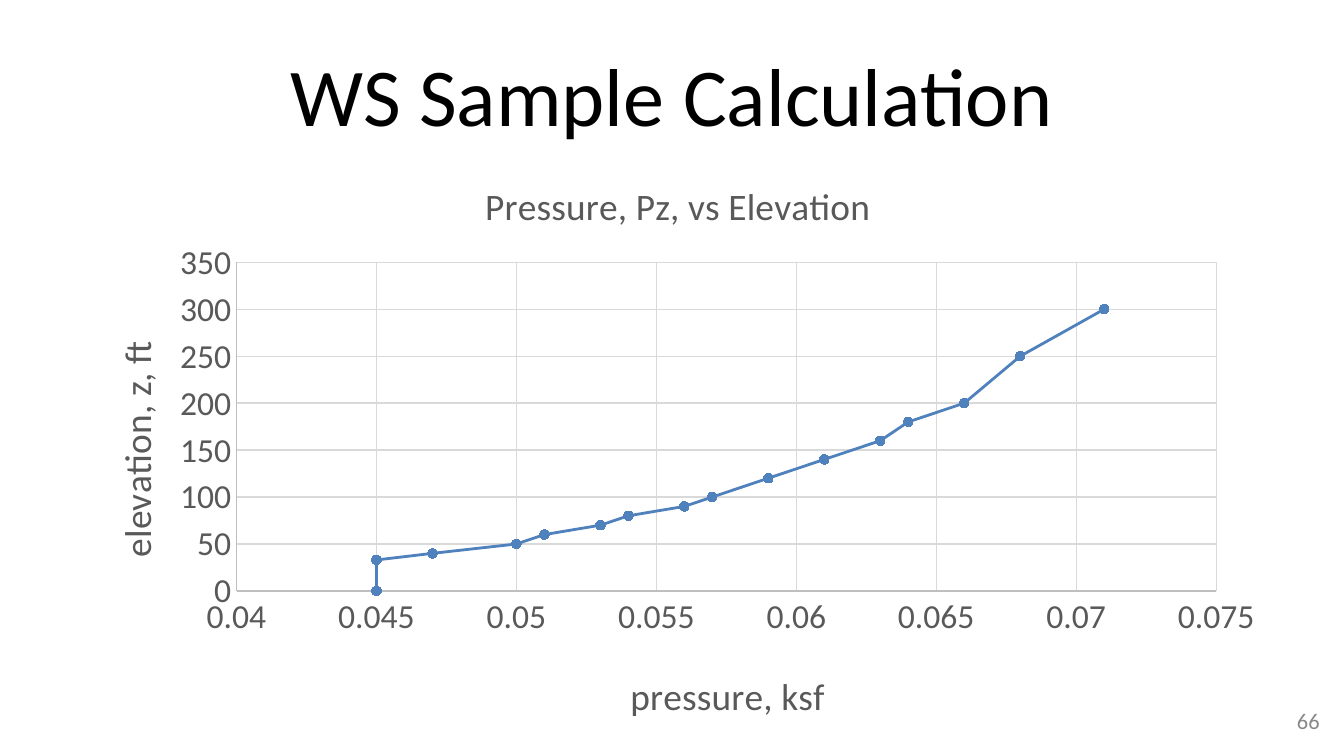
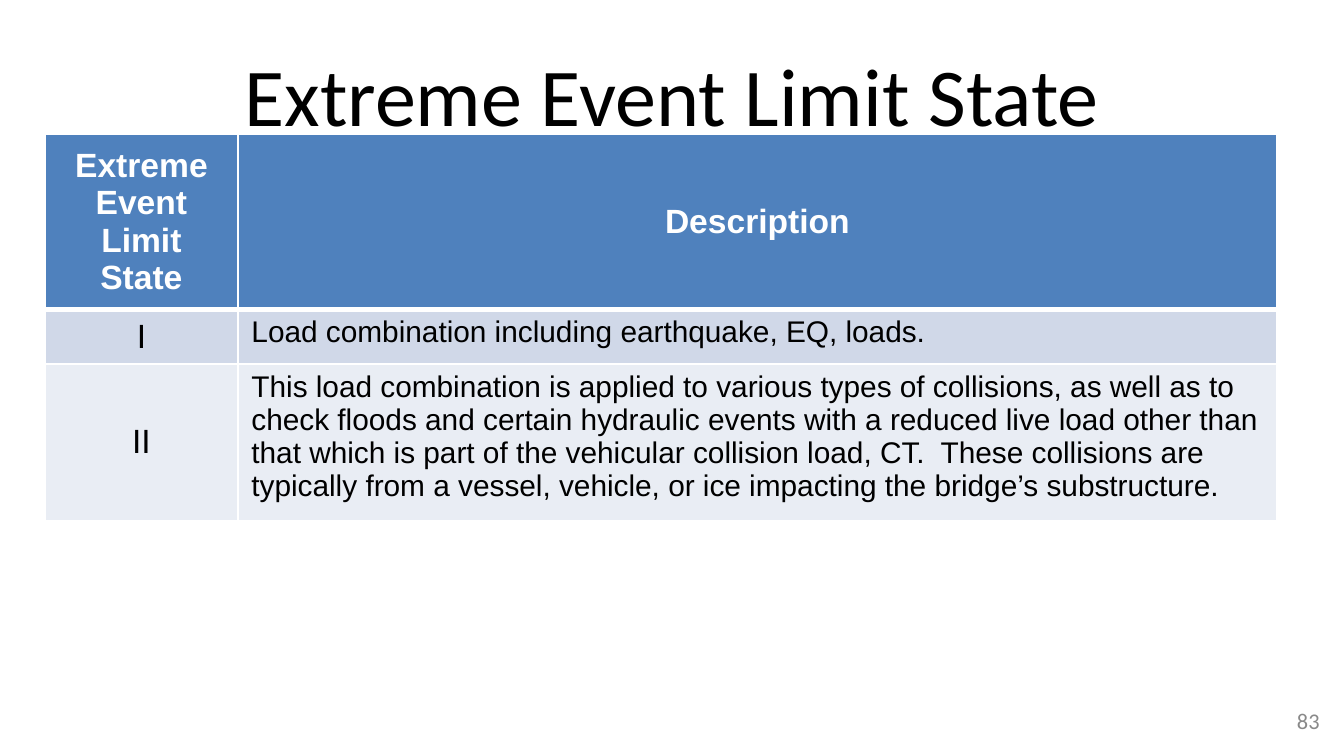
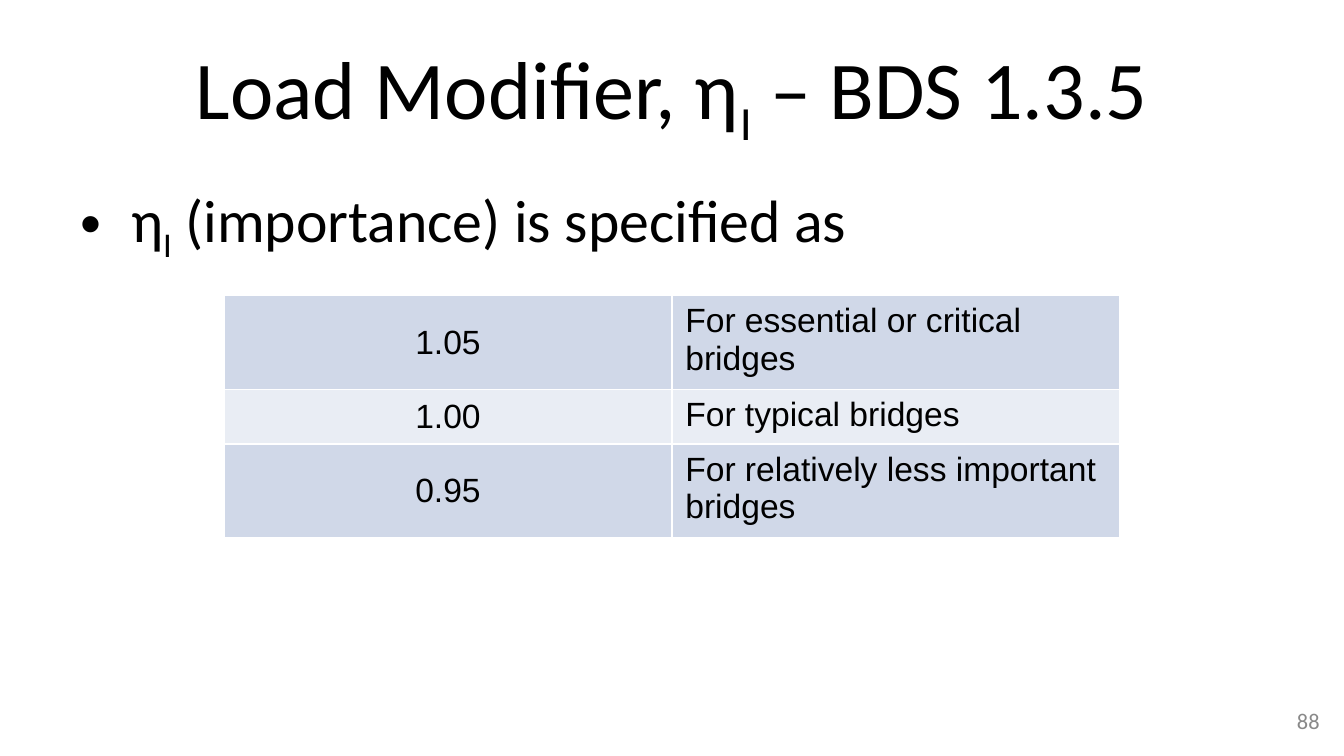
"""Build three bridge design slides: a wind pressure chart and two load tables."""
import pptx
import pptx.chart.data
import pptx.dml.color
import pptx.enum.chart
import pptx.enum.text
import pptx.oxml
import pptx.oxml.ns
import pptx.util

RGBColor = pptx.dml.color.RGBColor
BLACK = RGBColor(0x00, 0x00, 0x00)
WHITE = RGBColor(0xFF, 0xFF, 0xFF)
BLUE = RGBColor(0x4F, 0x81, 0xBD)
BAND_DARK = RGBColor(0xD0, 0xD8, 0xE8)
BAND_LIGHT = RGBColor(0xE9, 0xED, 0xF4)
NUMBER_GREY = RGBColor(0x89, 0x89, 0x89)
LABEL_GREY = RGBColor(0x59, 0x59, 0x59)
AXIS_GREY = RGBColor(0xBF, 0xBF, 0xBF)
GRID_GREY = RGBColor(0xD9, 0xD9, 0xD9)

LEFT = pptx.enum.text.PP_ALIGN.LEFT
CENTER = pptx.enum.text.PP_ALIGN.CENTER
RIGHT = pptx.enum.text.PP_ALIGN.RIGHT
TOP = pptx.enum.text.MSO_ANCHOR.TOP
MIDDLE = pptx.enum.text.MSO_ANCHOR.MIDDLE

EMU_PER_PX = 9525
SLIDE_SIZE = (960, 540)
TITLE_BOX = (48, 22, 864, 90)
BODY_BOX = (48, 126, 864, 356)
NUMBER_BOX = (728, 500, 224, 29)
CHART_BOX = (48, 102, 864, 427)
ROW_HEIGHT = 39
TITLE_ONLY, TITLE_AND_CONTENT = 5, 1

PRESSURES = [0.045, 0.045, 0.047, 0.05, 0.051, 0.053, 0.054, 0.056,
             0.057, 0.059, 0.061, 0.063, 0.064, 0.066, 0.068, 0.071]
ELEVATIONS = [0, 33, 40, 50, 60, 70, 80, 90,
              100, 120, 140, 160, 180, 200, 250, 300]

LIMIT_STATES = [
    ("Extreme Event Limit State", "Description"),
    ("I", "Load combination including earthquake, EQ, loads."),
    ("II", "This load combination is applied to various types of collisions, "
           "as well as to check floods and certain hydraulic events with a "
           "reduced live load other than that which is part of the vehicular "
           "collision load, CT.  These collisions are typically from a vessel, "
           "vehicle, or ice impacting the bridge’s substructure."),
]
IMPORTANCE_FACTORS = [
    ("1.05", "For essential or critical bridges"),
    ("1.00", "For typical bridges"),
    ("0.95", "For relatively less important bridges"),
]


def px(length):
    """Turn whole pixels into EMU."""
    return pptx.util.Emu(length * EMU_PER_PX)


def write(frame, text, size=18, color=BLACK, font="Calibri", bold=False, align=None):
    """Write text in a frame; parts between underscores become subscripts."""
    paragraph = frame.paragraphs[0]
    if align is not None:
        paragraph.alignment = align
    for index, part in enumerate(text.split("_")):
        run = paragraph.add_run()
        run.text = part
        run.font.size = pptx.util.Pt(size)
        run.font.name = font
        run.font.bold = bold
        run.font.color.rgb = color
        if index % 2:
            run._r.get_or_add_rPr().set("baseline", "-25000")


def fill_placeholder(placeholder, box, text, **style):
    """Move a placeholder to its box and write its text."""
    placeholder.left, placeholder.top, placeholder.width, placeholder.height = map(px, box)
    placeholder.text_frame.auto_size = pptx.enum.text.MSO_AUTO_SIZE.NONE
    write(placeholder.text_frame, text, **style)


def add_page(deck, layout, heading, number):
    """Add a slide with its title and page number."""
    slide = deck.slides.add_slide(deck.slide_layouts[layout])
    fill_placeholder(slide.shapes.title, TITLE_BOX, heading, size=44, align=CENTER)
    frame = slide.shapes.add_textbox(*map(px, NUMBER_BOX)).text_frame
    frame.word_wrap = True
    frame.vertical_anchor = MIDDLE
    write(frame, number, size=12, color=NUMBER_GREY, align=RIGHT)
    return slide


def set_layout(element, index, target="", **fractions):
    """Fix a chart part's place as fractions of the chart area."""
    for automatic in element.findall(pptx.oxml.ns.qn("c:layout")):
        element.remove(automatic)
    modes = "".join(f'<c:{key}Mode val="edge"/>' for key in ("x", "y"))
    values = "".join(f'<c:{key} val="{value}"/>' for key, value in fractions.items())
    element.insert(index, pptx.oxml.parse_xml(
        f'<c:layout {pptx.oxml.ns.nsdecls("c")}><c:manualLayout>'
        f'{target}{modes}{values}</c:manualLayout></c:layout>'))


def write_chart_title(title, text, x, y):
    """Write a chart or axis title at a fixed place."""
    write(title.text_frame, text, size=20, color=LABEL_GREY)
    set_layout(title._element, 1, x=x, y=y)


def style_line(line, color, width):
    """Set the colour and width of a line."""
    line.color.rgb = color
    line.width = pptx.util.Pt(width)


def style_axis(axis, low, high, step):
    """Set the scale, grid and labels of an axis."""
    axis.minimum_scale, axis.maximum_scale, axis.major_unit = low, high, step
    axis.has_major_gridlines = True
    axis.major_tick_mark = axis.minor_tick_mark = pptx.enum.chart.XL_TICK_MARK.NONE
    style_line(axis.major_gridlines.format.line, GRID_GREY, 0.75)
    style_line(axis.format.line, AXIS_GREY, 0.75)
    labels = axis.tick_labels.font
    labels.size = pptx.util.Pt(18)
    labels.name = "Calibri"
    labels.color.rgb = LABEL_GREY


def add_pressure_chart(slide, box):
    """Draw wind pressure against elevation in the box."""
    data = pptx.chart.data.XyChartData()
    profile = data.add_series("Series 1")
    for pressure, elevation in zip(PRESSURES, ELEVATIONS):
        profile.add_data_point(pressure, elevation)
    chart = slide.shapes.add_chart(
        pptx.enum.chart.XL_CHART_TYPE.XY_SCATTER_LINES, *map(px, box), data).chart
    chart.has_legend = False
    chart.font.name = "Calibri"
    chart.font.size = pptx.util.Pt(10)

    style_axis(chart.category_axis, 0.04, 0.075, 0.005)
    style_axis(chart.value_axis, 0, 350, 50)
    write_chart_title(chart.chart_title, "Pressure, Pz, vs Elevation", 0.34, 0.05)
    write_chart_title(chart.category_axis.axis_title, "pressure, ksf", 0.46, 0.87)
    elevation_title = chart.value_axis.axis_title
    write_chart_title(elevation_title, "elevation, z, ft", 0.03, 0.32)
    body = elevation_title.text_frame._element.find(pptx.oxml.ns.qn("a:bodyPr"))
    body.set("rot", "-5400000")
    body.set("vert", "horz")
    set_layout(chart._chartSpace.chart.plotArea, 0, '<c:layoutTarget val="inner"/>',
               x=0.14, y=0.2, w=0.81, h=0.55)

    plot = chart.plots[0]
    plot.vary_by_categories = False
    curve = plot.series[0]
    curve.smooth = False
    style_line(curve.format.line, BLUE, 1.5)
    curve.marker.style = pptx.enum.chart.XL_MARKER_STYLE.CIRCLE
    curve.marker.size = 5
    curve.marker.format.fill.solid()
    curve.marker.format.fill.fore_color.rgb = BLUE
    curve.marker.format.line.color.rgb = BLUE


def style_cell(cell, fill, bottom=1):
    """Give a cell white borders and a solid fill."""
    properties = cell._tc.get_or_add_tcPr()
    for side, points in (("L", 1), ("R", 1), ("T", 1), ("B", bottom)):
        properties.append(pptx.oxml.parse_xml(
            f'<a:ln{side} {pptx.oxml.ns.nsdecls("a")} w="{pptx.util.Pt(points)}">'
            f'<a:solidFill><a:srgbClr val="{WHITE}"/></a:solidFill></a:ln{side}>'))
    cell.fill.solid()
    cell.fill.fore_color.rgb = fill


def add_load_table(slide, left, top, widths, rows, header=False, detail_size=18):
    """Draw a banded table of keys and descriptions."""
    table = slide.shapes.add_table(
        len(rows), len(widths), px(left), px(top),
        px(sum(widths)), px(ROW_HEIGHT * len(rows))).table
    table.first_row = header
    table.horz_banding = False
    for column, width in zip(table.columns, widths):
        column.width = px(width)
    for row_index, row in enumerate(rows):
        heading = header and row_index == 0
        band = (BAND_DARK, BAND_LIGHT)[(row_index - header) % 2]
        for column_index, text in enumerate(row):
            cell = table.cell(row_index, column_index)
            style_cell(cell, BLUE if heading else band, 3 if heading else 1)
            centered = heading or column_index == 0
            cell.vertical_anchor = MIDDLE if centered else TOP
            write(cell.text_frame, text, font="Arial", bold=heading,
                  size=18 if centered else detail_size,
                  color=WHITE if heading else BLACK,
                  align=CENTER if centered else LEFT)


def main():
    """Build and save the deck."""
    deck = pptx.Presentation()
    deck.slide_width, deck.slide_height = map(px, SLIDE_SIZE)

    wind = add_page(deck, TITLE_ONLY, "WS Sample Calculation", "66")
    add_pressure_chart(wind, CHART_BOX)

    extreme = add_page(deck, TITLE_ONLY, "Extreme Event Limit State", "83")
    add_load_table(extreme, 32, 96, (138, 742), LIMIT_STATES, header=True, detail_size=16)

    modifier = add_page(deck, TITLE_AND_CONTENT, "Load Modifier, η_I_ – BDS 1.3.5", "88")
    fill_placeholder(modifier.placeholders[1], BODY_BOX,
                     "η_I_ (importance) is specified as", size=32)
    add_load_table(modifier, 160, 211, (320, 320), IMPORTANCE_FACTORS)

    deck.save("out.pptx")


if __name__ == "__main__":
    main()
